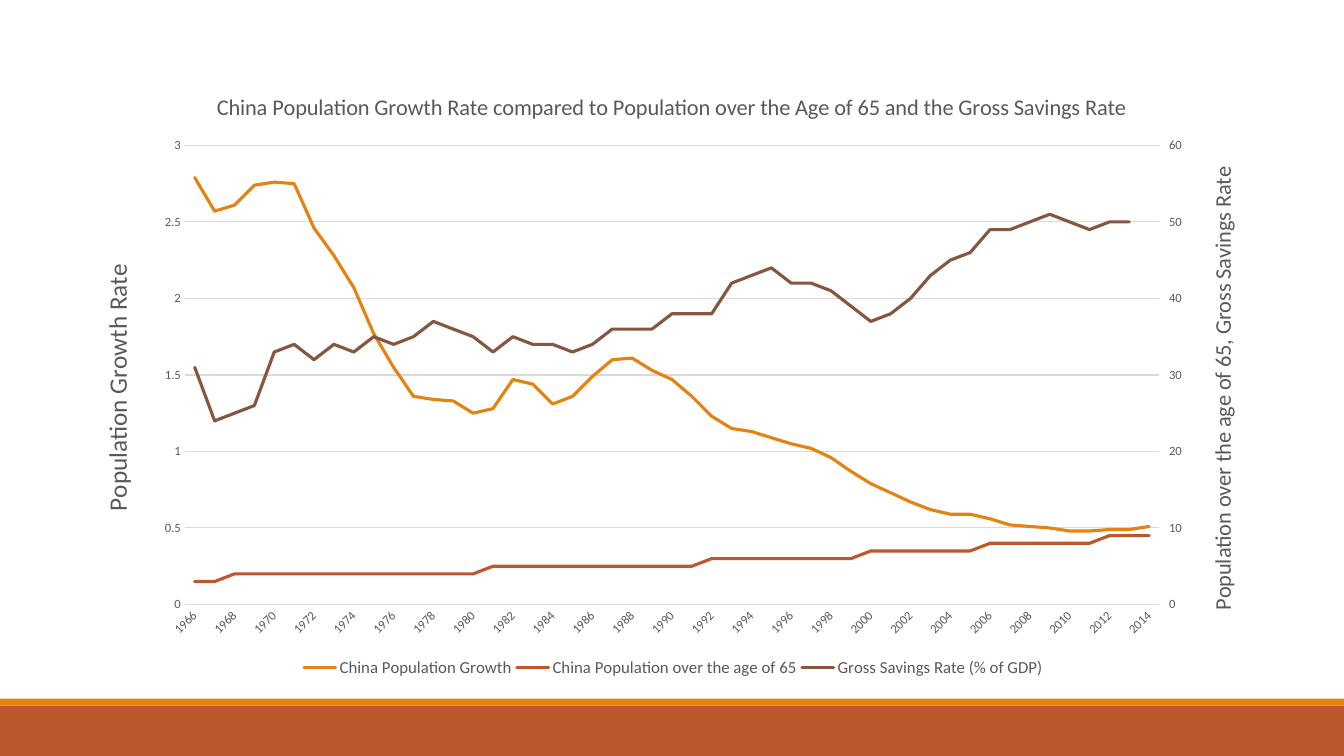
from copy import deepcopy
from lxml import etree
from pptx import Presentation
from pptx.chart.data import CategoryChartData
from pptx.dml.color import RGBColor
from pptx.enum.chart import XL_CHART_TYPE, XL_LEGEND_POSITION, XL_TICK_MARK
from pptx.enum.shapes import MSO_SHAPE
from pptx.oxml.ns import qn
from pptx.util import Pt

LINE = XL_CHART_TYPE.LINE
BOTTOM = XL_LEGEND_POSITION.BOTTOM
NONE = XL_TICK_MARK.NONE
RECT = MSO_SHAPE.RECTANGLE

FONT, GREY, PALE = "Calibri", "595959", "D9D9D9"
WIDE, HIGH = 960, 540
BARS = [(504, 36, "BD582C"), (499, 5, "E48312")]
BOX = (55.5, 50.4, 849.5, 438.5)
PLOT = {"x": 76.5, "y": 53.5, "w": 696, "h": 328}
KEY = {"x": 158, "y": 418, "w": 535, "h": 17}
HEAD = "China Population Growth Rate compared to Population over the Age of 65 and the Gross Savings Rate"
LEFT = "Population Growth Rate"
RIGHT = "Population over the age of 65, Gross Savings Rate"
YEARS = [str(year) for year in range(1966, 2015)]
SERIES = [
    ("China Population Growth", "E48312", [
        2.79, 2.57, 2.61, 2.74, 2.76, 2.75, 2.46, 2.28, 2.07, 1.77,
        1.55, 1.36, 1.34, 1.33, 1.25, 1.28, 1.47, 1.44, 1.31, 1.36,
        1.49, 1.6, 1.61, 1.53, 1.47, 1.36, 1.23, 1.15, 1.13, 1.09,
        1.05, 1.02, 0.96, 0.87, 0.79, 0.73, 0.67, 0.62, 0.59, 0.59,
        0.56, 0.52, 0.51, 0.5, 0.48, 0.48, 0.49, 0.49, 0.51]),
    ("China Population over the age of 65", "BD582C", [
        3, 3, 4, 4, 4, 4, 4, 4, 4, 4,
        4, 4, 4, 4, 4, 5, 5, 5, 5, 5,
        5, 5, 5, 5, 5, 5, 6, 6, 6, 6,
        6, 6, 6, 6, 7, 7, 7, 7, 7, 7,
        8, 8, 8, 8, 8, 8, 9, 9, 9]),
    ("Gross Savings Rate (% of GDP)", "865640", [
        31, 24, 25, 26, 33, 34, 32, 34, 33, 35,
        34, 35, 37, 36, 35, 33, 35, 34, 34, 33,
        34, 36, 36, 36, 38, 38, 38, 42, 43, 44,
        42, 42, 41, 39, 37, 38, 40, 43, 45, 46,
        49, 49, 50, 51, 50, 49, 50, 50, None]),
]


def color(text):
    return RGBColor.from_string(text)


def style(font, size):
    font.name, font.size, font.bold = FONT, Pt(size), False
    font.color.rgb = color(GREY)


def place(node, spot, index):
    for old in node.findall(qn("c:layout")):
        node.remove(old)
    layout = etree.Element(qn("c:layout"))
    node.insert(index, layout)
    manual = etree.SubElement(layout, qn("c:manualLayout"))
    if "w" in spot:
        etree.SubElement(manual, qn("c:layoutTarget")).set("val", "inner")
    for key in "xy":
        etree.SubElement(manual, qn(f"c:{key}Mode")).set("val", "edge")
    for key, size in spot.items():
        share = size / (BOX[2] if key in "xw" else BOX[3])
        etree.SubElement(manual, qn(f"c:{key}")).set("val", str(share))


def write(title, text, size, x, y):
    frame = title.text_frame
    frame.text = text
    style(frame.paragraphs[0].runs[0].font, size)
    place(title._element, {"x": x, "y": y}, 1)


def put(node, tag, val):
    node.find(".//" + qn(tag)).set("val", str(val))


def split(area):
    first = area.find(qn("c:lineChart"))
    second = deepcopy(first)
    first.addnext(second)
    for ser in first.findall(qn("c:ser"))[1:]:
        first.remove(ser)
    second.remove(second.find(qn("c:ser")))
    ids = ["50010", "50020"]
    for node, key in zip(second.findall(qn("c:axId")), ids):
        node.set("val", key)
    cat, val = area.find(qn("c:catAx")), area.find(qn("c:valAx"))
    dates, rates = deepcopy(cat), deepcopy(val)
    val.addnext(dates)
    dates.addnext(rates)
    for axis, own, other in [(dates, *ids), (rates, *ids[::-1])]:
        put(axis, "c:axId", own)
        put(axis, "c:crossAx", other)
    put(dates, "c:delete", 1)
    rates.remove(rates.find(qn("c:majorGridlines")))
    for tag, new in [("c:axPos", "r"), ("c:max", 60), ("c:majorUnit", 10),
                     ("c:crosses", "max"), ("c:majorTickMark", "out")]:
        put(rates, tag, new)
    title = rates.find(qn("c:title"))
    title.find(".//" + qn("a:t")).text = RIGHT
    title.find(".//" + qn("a:rPr")).set("sz", "1600")
    place(title, {"x": 804, "y": 66}, 1)


def main():
    deck = Presentation()
    deck.slide_width, deck.slide_height = Pt(WIDE), Pt(HIGH)
    slide = deck.slides.add_slide(deck.slide_layouts[6])
    for top, tall, fill in BARS:
        bar = slide.shapes.add_shape(RECT, 0, Pt(top), Pt(WIDE), Pt(tall))
        bar.shadow.inherit = False
        bar.fill.solid()
        bar.fill.fore_color.rgb = color(fill)
        bar.line.fill.background()

    data = CategoryChartData()
    data.categories = YEARS
    for name, _, vals in SERIES:
        data.add_series(name, vals)
    chart = slide.shapes.add_chart(LINE, *map(Pt, BOX), data).chart
    style(chart.font, 10)
    write(chart.chart_title, HEAD, 16, 96.5, 12)
    chart.has_legend = True
    chart.legend.position = BOTTOM
    chart.legend.include_in_layout = False
    style(chart.legend.font, 12)
    place(chart.legend._element, KEY, 1)
    for ser, (_, tint, _) in zip(chart.plots[0].series, SERIES):
        ser.smooth = False
        ser.format.line.color.rgb = color(tint)
        ser.format.line.width = Pt(2.25)
        ser._element.find(".//" + qn("a:ln")).set("cap", "rnd")

    cat, val = chart.category_axis, chart.value_axis
    for axis in (cat, val):
        axis.major_tick_mark = axis.minor_tick_mark = NONE
        style(axis.tick_labels.font, 9)
    val.has_major_gridlines = True
    for line in (cat.format.line, val.major_gridlines.format.line):
        line.color.rgb = color(PALE)
        line.width = Pt(0.75)
    val.format.line.fill.background()
    val.minimum_scale, val.maximum_scale, val.major_unit = 0, 3, 0.5
    val.tick_labels.number_format = "General"
    val.tick_labels.number_format_is_linked = False
    write(val.axis_title, LEFT, 18, 12.5, 135)
    turn = val.axis_title._element.find(".//" + qn("a:bodyPr"))
    turn.set("rot", "-5400000")
    turn.set("vert", "horz")
    cat._element.find(".//" + qn("a:bodyPr")).set("rot", "-2700000")
    skip = etree.Element(qn("c:tickLblSkip"))
    skip.set("val", "2")
    cat._element.find(qn("c:noMultiLvlLbl")).addprevious(skip)

    area = chart._chartSpace.find(".//" + qn("c:plotArea"))
    place(area, PLOT, 0)
    split(area)
    deck.save("out.pptx")


if __name__ == "__main__":
    main()
